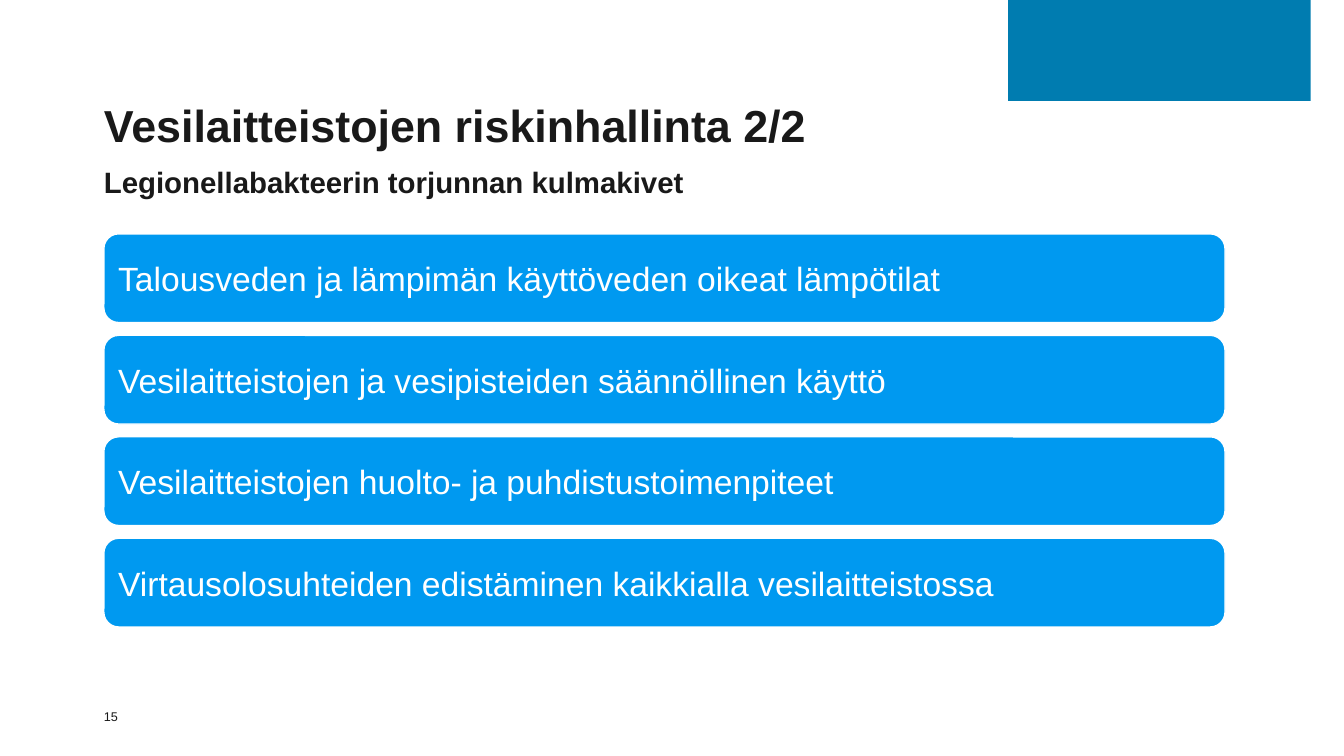
from pptx import Presentation
from pptx.dml.color import RGBColor
from pptx.enum.shapes import MSO_SHAPE as Shape
from pptx.enum.text import MSO_ANCHOR as Anchor, PP_ALIGN as Align
from pptx.util import Inches, Pt

WIDTH, HEIGHT = 13.33, 7.5
LEFT, CONTENT_WIDTH = 1.03, 11.12
INK, WHITE, SKY, OCEAN = "191919", "FFFFFF", "0099F0", "007CB0"
CORNERSTONES = [
    "Talousveden ja lämpimän käyttöveden oikeat lämpötilat",
    "Vesilaitteistojen ja vesipisteiden säännöllinen käyttö",
    "Vesilaitteistojen huolto- ja puhdistustoimenpiteet",
    "Virtausolosuhteiden edistäminen kaikkialla vesilaitteistossa",
]


def color(hex_code):
    return RGBColor.from_string(hex_code)


def write(shape, text, size, ink, bold=False, anchor=Anchor.TOP, inset=0):
    frame = shape.text_frame
    frame.word_wrap = True
    frame.vertical_anchor = anchor
    frame.margin_left = frame.margin_right = Inches(inset)
    frame.margin_top = frame.margin_bottom = 0
    paragraph = frame.paragraphs[0]
    paragraph.alignment = Align.LEFT
    run = paragraph.add_run()
    run.text = text
    run.font.name, run.font.size, run.font.bold = "Arial", Pt(size), bold
    run.font.color.rgb = color(ink)


def add_label(slide, box, text, size, **style):
    label = slide.shapes.add_textbox(*map(Inches, box))
    write(label, text, size, INK, **style)


def bezier(start, pull_out, pull_in, end, steps=40):
    """Points along a cubic curve, without its start."""
    for step in range(1, steps + 1):
        t = step / steps
        weights = ((1 - t) ** 3, 3 * t * (1 - t) ** 2, 3 * t * t * (1 - t), t ** 3)
        corners = (start, pull_out, pull_in, end)
        yield tuple(sum(w * c[axis] for w, c in zip(weights, corners))
                    for axis in (0, 1))


def add_corner_arc(slide, box):
    left, top, width, height = box

    def at(x, y):
        return left + x * width, top + y * height

    start, lowest, end = at(0, 0), at(0.61, 1), at(1, 0.62)
    outline = [*bezier(start, at(0.16, 0.62), at(0.375, 1), lowest),
               *bezier(lowest, at(0.75, 1), at(0.88, 0.86), end),
               at(1, 0)]
    builder = slide.shapes.build_freeform(*start, scale=Inches(1))
    builder.add_line_segments(outline, close=True)
    arc = builder.convert_to_shape()
    arc.shadow.inherit = False
    arc.fill.solid()
    arc.fill.fore_color.rgb = color(OCEAN)
    arc.line.fill.background()


def add_cornerstones(slide, box, texts, bar_height=0.88):
    left, top, width, height = box
    pitch = (height - bar_height) / (len(texts) - 1)
    for row, text in enumerate(texts):
        bar = slide.shapes.add_shape(
            Shape.ROUNDED_RECTANGLE,
            *map(Inches, (left, top + row * pitch, width, bar_height)))
        bar.shadow.inherit = False
        bar.fill.solid()
        bar.fill.fore_color.rgb = color(SKY)
        bar.line.color.rgb = color(WHITE)
        bar.line.width = Pt(1)
        write(bar, text, 24, WHITE, anchor=Anchor.MIDDLE, inset=0.1)


def add_heading(slide, box):
    left, top, width, height = box
    title_height = 0.62 * height
    subtitle_height = 0.31 * height
    add_label(slide, (left, top, width, title_height),
              "Vesilaitteistojen riskinhallinta 2/2", 32,
              bold=True, anchor=Anchor.BOTTOM)
    add_label(slide, (left, top + height - subtitle_height, width, subtitle_height),
              "Legionellabakteerin torjunnan kulmakivet", 21, bold=True)


def main():
    deck = Presentation()
    deck.slide_width, deck.slide_height = Inches(WIDTH), Inches(HEIGHT)
    slide = deck.slides.add_slide(deck.slide_layouts[6])

    # Decoration and heading
    add_corner_arc(slide, (9.15, 0, WIDTH - 9.15, 1))
    add_heading(slide, (LEFT, 0.4, CONTENT_WIDTH, 1.78))
    # Cornerstone bars
    add_cornerstones(slide, (LEFT, 2.32, CONTENT_WIDTH, 3.9), CORNERSTONES)
    # Page number
    add_label(slide, (LEFT, 6.95, 0.36, 0.31), "15", 9, anchor=Anchor.MIDDLE)

    deck.save("out.pptx")


if __name__ == "__main__":
    main()
